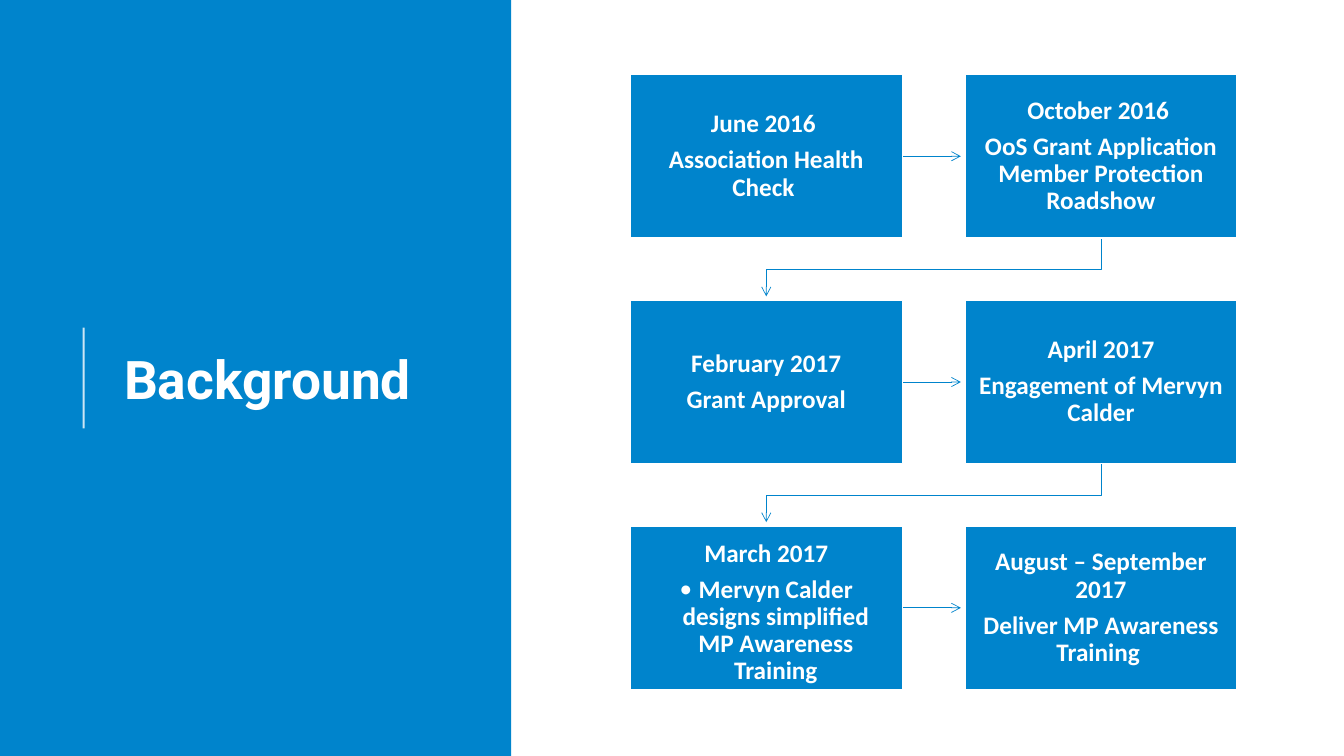
"""Build the Background slide: a title panel beside a six-step timeline."""
from lxml.etree import SubElement
from pptx import Presentation
from pptx.dml.color import RGBColor
from pptx.enum.shapes import MSO_CONNECTOR, MSO_SHAPE
from pptx.enum.text import MSO_ANCHOR, PP_ALIGN
from pptx.oxml.ns import qn
from pptx.util import Inches, Pt

COLORS = {"blue": "0084CC", "white": "FFFFFF"}
STEPS = [
    ("June 2016 ", "Association Health Check "),
    ("October 2016 ", "OoS Grant Application Member Protection Roadshow"),
    ("February 2017", "Grant Approval"),
    ("April 2017", "Engagement of Mervyn Calder"),
    ("March 2017", "Mervyn Calder designs simplified MP Awareness Training"),
    ("August – September 2017", "Deliver MP Awareness Training "),
]
BULLETED_STEP = 4
LEFT, TOP = 6.25, 0.74
BOX_WIDTH, BOX_HEIGHT = 2.7, 1.62
COLUMN_STEP, ROW_STEP = 3.32, 2.24
ARROW_GAP = 0.04


def add_block(left, top, width, height):
    block = slide.shapes.add_shape(
        MSO_SHAPE.RECTANGLE, Inches(left), Inches(top), Inches(width), Inches(height))
    block.shadow.inherit = False
    block.fill.solid()
    block.fill.fore_color.rgb = RGBColor.from_string(COLORS["blue"])
    block.line.fill.background()
    return block


def style_line(stroke, color, width, arrow=True):
    stroke.line.color.rgb = RGBColor.from_string(COLORS[color])
    stroke.line.width = Pt(width)
    properties = stroke._element.spPr
    if arrow:
        SubElement(properties.find(qn("a:ln")), qn("a:tailEnd"), type="arrow")
    SubElement(properties, qn("a:effectLst"))


prs = Presentation()
prs.slide_width, prs.slide_height = Inches(13.33), Inches(7.5)
slide = prs.slides.add_slide(prs.slide_layouts[5])

panel = add_block(0, 0, 5.07, 7.5)
slide.shapes._spTree.insert(2, panel._element)

accent = slide.shapes.add_connector(
    MSO_CONNECTOR.STRAIGHT, Inches(0.83), Inches(4.25), Inches(0.83), Inches(3.25))
style_line(accent, "white", 1.5, arrow=False)
accent_color = accent._element.spPr.find(".//" + qn("a:srgbClr"))
SubElement(accent_color, qn("a:alpha"), val="80000")

title = slide.shapes.title
title.left, title.top = Inches(1.13), Inches(0.78)
title.width, title.height = Inches(3.69), Inches(6.02)
title.text_frame.text = "Background"
title.text_frame.word_wrap = True
title.text_frame.vertical_anchor = MSO_ANCHOR.MIDDLE
heading = title.text_frame.paragraphs[0]
heading.alignment = PP_ALIGN.LEFT
heading.line_spacing = 0.9
heading_font = heading.runs[0].font
heading_font.name, heading_font.size, heading_font.bold = "Roboto", Pt(38), True
heading_font.color.rgb = RGBColor.from_string(COLORS["white"])

for index, (date, event) in enumerate(STEPS):
    row, column = divmod(index, 2)
    left, top = LEFT + column * COLUMN_STEP, TOP + row * ROW_STEP
    right, bottom = left + BOX_WIDTH, top + BOX_HEIGHT

    if column == 0:
        middle = Inches(top + BOX_HEIGHT / 2)
        arrow = slide.shapes.add_connector(
            MSO_CONNECTOR.STRAIGHT, Inches(right), middle,
            Inches(LEFT + COLUMN_STEP - ARROW_GAP), middle)
        style_line(arrow, "blue", 0.5)
    elif index < len(STEPS) - 1:
        start_x = left + BOX_WIDTH / 2
        end_x = start_x - COLUMN_STEP
        bend_y = bottom + 0.31
        end_y = top + ROW_STEP - ARROW_GAP
        outline = slide.shapes.build_freeform(Inches(start_x), Inches(bottom))
        outline.add_line_segments(
            [(Inches(x), Inches(y))
             for x, y in ((start_x, bend_y), (end_x, bend_y), (end_x, end_y))],
            close=False)
        return_arrow = outline.convert_to_shape()
        return_arrow.fill.background()
        style_line(return_arrow, "blue", 0.5)

    step = add_block(left, top, BOX_WIDTH, BOX_HEIGHT)
    step.line.color.rgb = RGBColor.from_string(COLORS["white"])
    step.line.width = Pt(1)
    frame = step.text_frame
    frame.word_wrap = True
    frame.margin_left = frame.margin_right = Inches(0.13)
    frame.margin_top = frame.margin_bottom = Inches(0.14)
    frame.vertical_anchor = MSO_ANCHOR.TOP if index == BULLETED_STEP else MSO_ANCHOR.MIDDLE
    frame.text = f"{date}\n{event}"
    for paragraph in frame.paragraphs:
        paragraph.alignment = PP_ALIGN.CENTER
        paragraph.line_spacing = 0.9
        paragraph.space_after = Pt(6.3)
        font = paragraph.runs[0].font
        font.name, font.size, font.bold = "Calibri", Pt(18), True
        font.color.rgb = RGBColor.from_string(COLORS["white"])
    if index == BULLETED_STEP:
        detail = frame.paragraphs[1]
        detail.level = 1
        detail.space_after = Pt(2.7)
        indents = detail._p.get_or_add_pPr()
        indents.set("marL", str(Inches(0.19)))
        indents.set("indent", str(-Inches(0.19)))
        SubElement(indents, qn("a:buFont"), typeface="Calibri")
        SubElement(indents, qn("a:buChar"), char="•")

prs.save("out.pptx")
